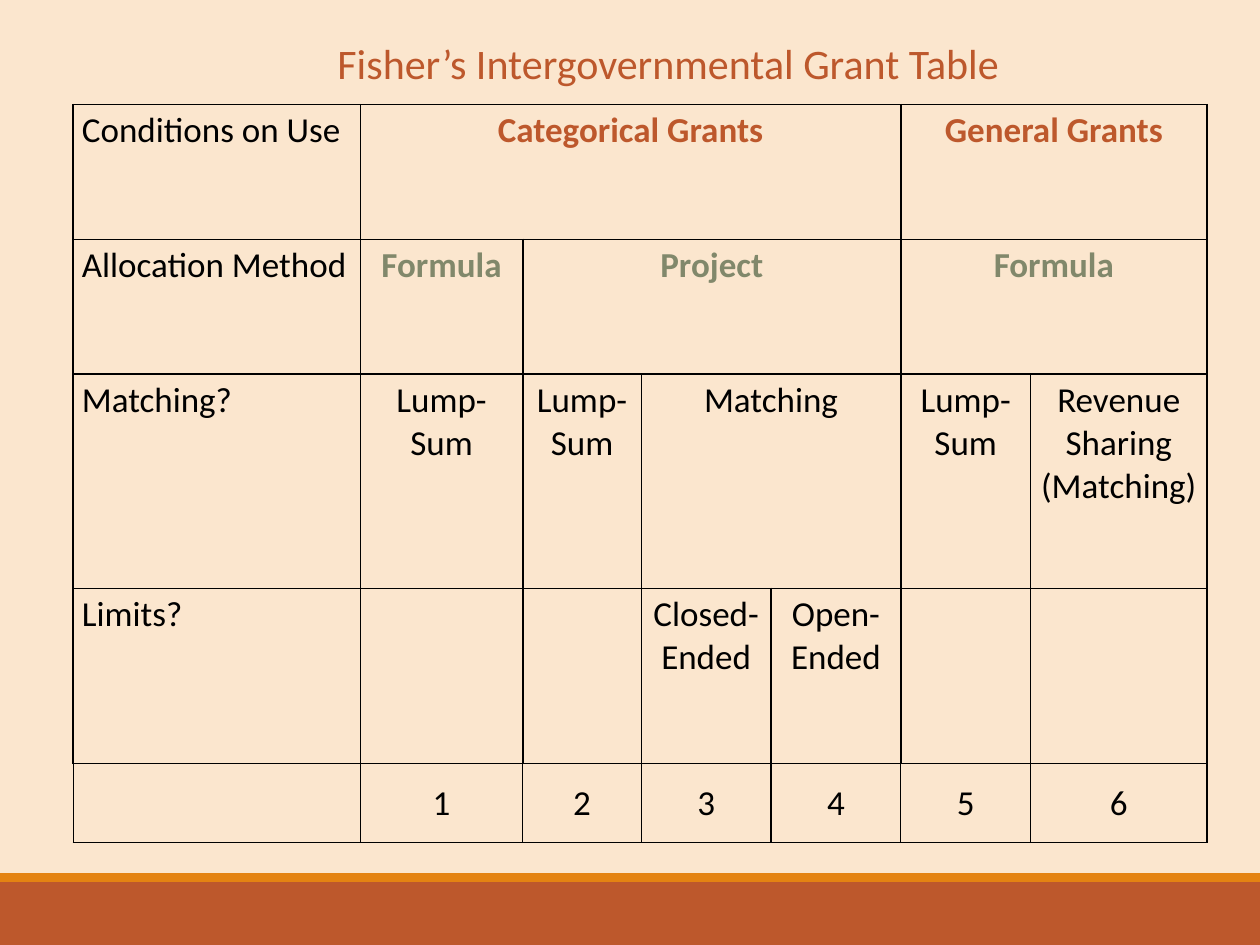
from lxml import etree
from pptx import Presentation, util as u
from pptx.dml.color import RGBColor
from pptx.enum import shapes, text
from pptx.oxml import ns

RUST, AMBER, SAGE, BLACK = "BD582C", "E48312", "81886B", "000000"


def write(par, words, size, color, bold=False):
    run = par.add_run()
    run.text = words
    run.font.name = "Calibri"
    run.font.size = u.Pt(size)
    run.font.bold = bold
    run.font.color.rgb = RGBColor.from_string(color)


def rule(cell, widths):
    """Draw black cell borders; widths are points for left, right, top, bottom."""
    props = cell._tc.get_or_add_tcPr()
    for i, (side, width) in enumerate(zip("LRTB", widths)):
        line = etree.Element(ns.qn("a:ln" + side), w=str(u.Pt(width)))
        fill = etree.SubElement(line, ns.qn("a:solidFill"))
        etree.SubElement(fill, ns.qn("a:srgbClr"), val=BLACK)
        props.insert(i, line)


deck = Presentation()
deck.slide_width, deck.slide_height = u.Inches(10), u.Inches(7.5)
slide = deck.slides.add_slide(deck.slide_layouts[6])
back = slide.background.fill
back.solid()
back.fore_color.rgb = RGBColor.from_string("FBE6CE")

# Footer bands
for top, height, color in [(7, 0.5, RUST), (6.93, 0.07, AMBER)]:
    band = slide.shapes.add_shape(shapes.MSO_SHAPE.RECTANGLE, 0, u.Inches(top),
                                  u.Inches(10), u.Inches(height))
    band.shadow.inherit = False
    band.fill.solid()
    band.fill.fore_color.rgb = RGBColor.from_string(color)
    band.line.fill.background()

# Title
title = slide.shapes.add_textbox(u.Inches(2.58), u.Inches(0.25),
                                 u.Inches(5.5), u.Inches(0.5)).text_frame
title.word_wrap = False
title.auto_size = text.MSO_AUTO_SIZE.SHAPE_TO_FIT_TEXT
write(title.paragraphs[0], "Fisher’s Intergovernmental Grant Table", 24, RUST)

# Grant table
cols = [2.28, 1.29, 0.94, 1.03, 1.03, 1.03, 1.4]
rows = [1.07, 1.07, 1.7, 1.39, 0.63]
grid = slide.shapes.add_table(len(rows), len(cols), u.Inches(0.58), u.Inches(0.83),
                              u.Inches(sum(cols)), u.Inches(sum(rows))).table
grid.first_row = grid.horz_banding = False
for col, width in zip(grid.columns, cols):
    col.width = u.Inches(width)
for row, height in zip(grid.rows, rows):
    row.height = u.Inches(height)

last = len(rows) - 1
for r in range(len(rows)):
    for c in range(len(cols)):
        cell = grid.cell(r, c)
        cell.fill.background()
        cell.margin_left = cell.margin_right = u.Inches(0.07)
        cell.margin_top = cell.margin_bottom = u.Inches(0.04)
        rule(cell, (0.75, 0.75, 1, 0.75) if r == last else (1, 1, 1, 1))

# Each row: (column, columns spanned, words)
labels = [
    [(0, 1, "Conditions on Use"), (1, 4, "Categorical Grants"), (5, 2, "General Grants")],
    [(0, 1, "Allocation Method"), (1, 1, "Formula"), (2, 3, "Project"), (5, 2, "Formula")],
    [(0, 1, "Matching?"), (1, 1, "Lump-Sum"), (2, 1, "Lump-Sum"), (3, 2, "Matching"),
     (5, 1, "Lump-Sum"), (6, 1, "Revenue Sharing (Matching)")],
    [(0, 1, "Limits?"), (3, 1, "Closed-Ended"), (4, 1, "Open-Ended")],
    [(n, 1, str(n)) for n in range(1, 7)],
]
heads = {0: RUST, 1: SAGE}
for r, items in enumerate(labels):
    for c, span, words in items:
        cell = grid.cell(r, c)
        if span > 1:
            cell.merge(grid.cell(r, c + span - 1))
        par = cell.text_frame.paragraphs[0]
        if c:
            par.alignment = text.PP_ALIGN.CENTER
        if r == last:
            cell.vertical_anchor = text.MSO_ANCHOR.MIDDLE
            par.space_before = u.Pt(4)
        head = c > 0 and r in heads
        write(par, words, 20, heads[r] if head else BLACK, head)

deck.save("out.pptx")
